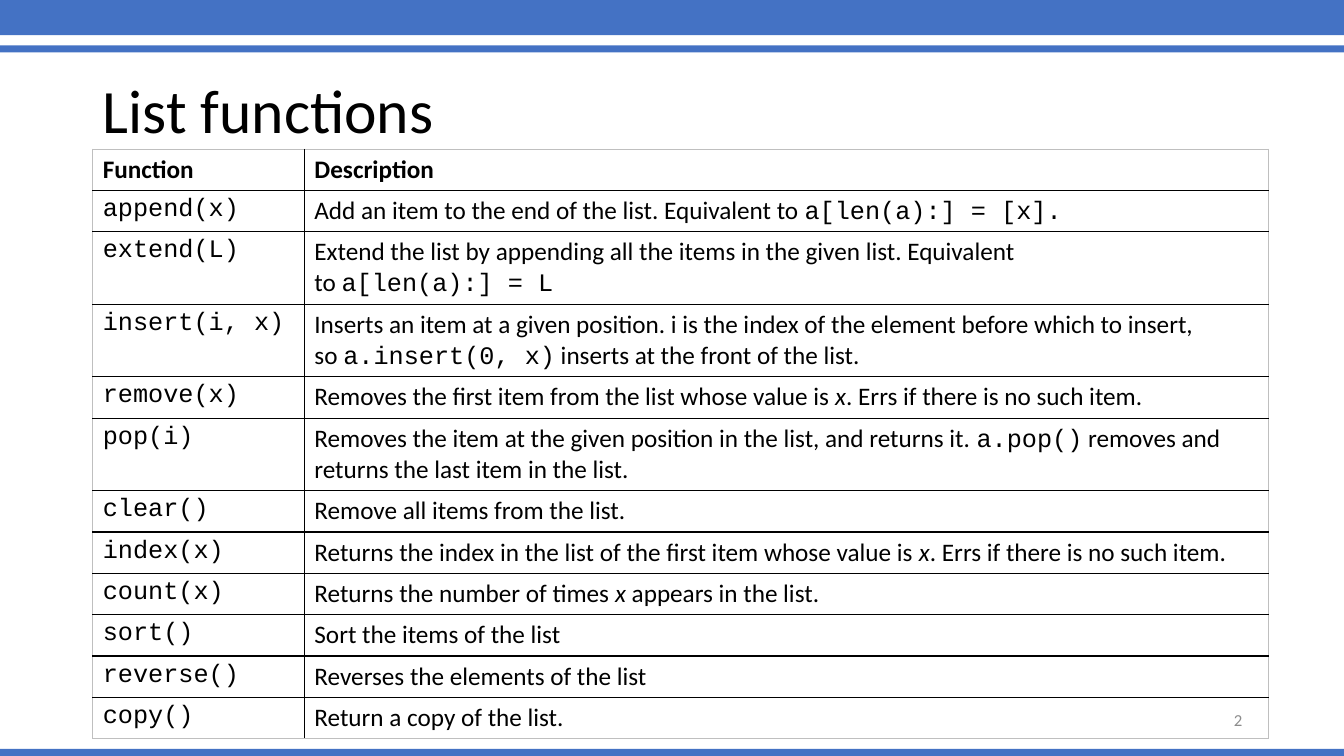
import pptx
import pptx.util
import pptx.dml.color
import pptx.enum.shapes
import pptx.enum.text
import pptx.oxml
import pptx.oxml.ns

COLORS = {"band": "4472C4", "ink": "000000", "edge": "BFBFBF", "number": "8C8C8C"}
BODY, CODE = "Calibri", "Courier New"
HARD_SPACE = chr(160)
WIDTH, HEIGHT = 13.33, 7.5
LINE_ROW, DOUBLE_ROW = 0.41, 0.72
ERRS = ". Errs if there is no such item."

FUNCTIONS = [
    ("append(x)", LINE_ROW, ["Add an item to the end of the list. Equivalent to ", ("code", "a[len(a):] = [x].")]),
    ("extend(L)", DOUBLE_ROW, [
        "Extend the list by appending all the items in the given list. Equivalent to ",
        ("code", "a[len(a):] = L")]),
    ("insert(i, x)", DOUBLE_ROW, [
        "Inserts an item at a given position. i is the index of the element before which to insert, so ",
        ("code", "a.insert(0, x)"), " inserts at the front of the list."]),
    ("remove(x)", LINE_ROW, ["Removes the first item from the list whose value is ", ("variable", "x"), ERRS]),
    ("pop(i)", DOUBLE_ROW, [
        "Removes the item at the given position in the list, and returns it. ",
        ("code", "a.pop()"), " removes and returns the last item in the list."]),
    ("clear()", LINE_ROW, ["Remove all items from the list."]),
    ("index(x)", LINE_ROW, [
        "Returns the index in the list of the first item whose value is ", ("variable", "x"), ERRS]),
    ("count(x)", LINE_ROW, ["Returns the number of times ", ("variable", "x"), " appears in the list."]),
    ("sort()", LINE_ROW, ["Sort the items of the list"]),
    ("reverse()", LINE_ROW, ["Reverses the elements of the list"]),
    ("copy()", LINE_ROW, ["Return a copy of the list."]),
]


def inches(*lengths):
    return [pptx.util.Inches(length) for length in lengths]


def rgb(name):
    return pptx.dml.color.RGBColor.from_string(COLORS[name])


def add_text(paragraph, text, size=18, font=BODY, color="ink", bold=False, italic=False):
    run = paragraph.add_run()
    run.text = text
    run.font.size = pptx.util.Pt(size)
    run.font.name = font
    run.font.color.rgb = rgb(color)
    run.font.bold = bold
    run.font.italic = italic


def glue_edges(text):
    core = text.strip(" ")
    return text.replace(core, "|").replace(" ", HARD_SPACE).replace("|", core)


def add_description(paragraph, pieces):
    for piece in pieces:
        if isinstance(piece, str):
            add_text(paragraph, glue_edges(piece))
        elif piece[0] == "code":
            add_text(paragraph, piece[1].replace(" ", HARD_SPACE), font=CODE)
        else:
            add_text(paragraph, piece[1], italic=True)


def add_bands(slide, boxes):
    for box in boxes:
        band = slide.shapes.add_shape(pptx.enum.shapes.MSO_SHAPE.RECTANGLE, *inches(*box))
        band.shadow.inherit = False
        band.fill.solid()
        band.fill.fore_color.rgb = rgb("band")
        band.line.fill.background()


def add_label(slide, box, text, align, **format):
    frame = slide.shapes.add_textbox(*inches(*box)).text_frame
    frame.word_wrap = True
    frame.vertical_anchor = pptx.enum.text.MSO_ANCHOR.MIDDLE
    paragraph = frame.paragraphs[0]
    paragraph.alignment = align
    paragraph.line_spacing = 0.9
    add_text(paragraph, text, **format)


def set_borders(cell, outer):
    properties = cell._tc.get_or_add_tcPr()
    for position, side in enumerate(("lnL", "lnR", "lnT", "lnB")):
        color, width = ("edge", 0.5) if side in outer else ("ink", 1)
        properties.insert(position, pptx.oxml.parse_xml(
            f'<a:{side} {pptx.oxml.ns.nsdecls("a")} w="{pptx.util.Pt(width)}"><a:solidFill>'
            f'<a:srgbClr val="{COLORS[color]}"/></a:solidFill></a:{side}>'))


def add_function_table(slide, box, first_share):
    rows = len(FUNCTIONS) + 1
    table = slide.shapes.add_table(rows, 2, *inches(*box)).table
    table.first_row = False
    table.horz_banding = False
    for column, share in zip(table.columns, (first_share, 1 - first_share)):
        column.width = pptx.util.Inches(box[2] * share)
    for column, heading in enumerate(("Function", "Description")):
        add_text(table.cell(0, column).text_frame.paragraphs[0], heading, bold=True)
    table.rows[0].height = pptx.util.Inches(LINE_ROW)
    for row, (function, height, description) in enumerate(FUNCTIONS, 1):
        table.rows[row].height = pptx.util.Inches(height)
        add_text(table.cell(row, 0).text_frame.paragraphs[0], function, font=CODE)
        add_description(table.cell(row, 1).text_frame.paragraphs[0], description)
    for row in range(rows):
        for column in range(2):
            cell = table.cell(row, column)
            cell.fill.background()
            outer = {"lnR" if column else "lnL"}
            if row == 0:
                outer.add("lnT")
            if row == rows - 1:
                outer.add("lnB")
            set_borders(cell, outer)


def main():
    deck = pptx.Presentation()
    deck.slide_width, deck.slide_height = inches(WIDTH, HEIGHT)
    slide = deck.slides.add_slide(deck.slide_layouts[6])
    left = 0.92
    align = pptx.enum.text.PP_ALIGN
    add_bands(slide, [(0, -0.03, WIDTH, 0.38), (0, 0.45, WIDTH, 0.07), (0, HEIGHT - 0.07, WIDTH, 0.07)])
    add_label(slide, (left, 0.4, 11.5, 1.45), "List functions", align.LEFT, size=44)
    add_function_table(slide, (left, 1.48, 11.66, 5.75), 0.18)
    add_label(slide, (9.42, 6.95, 3, 0.4), "2", align.RIGHT, size=12, color="number")
    deck.save("out.pptx")


if __name__ == "__main__":
    main()
